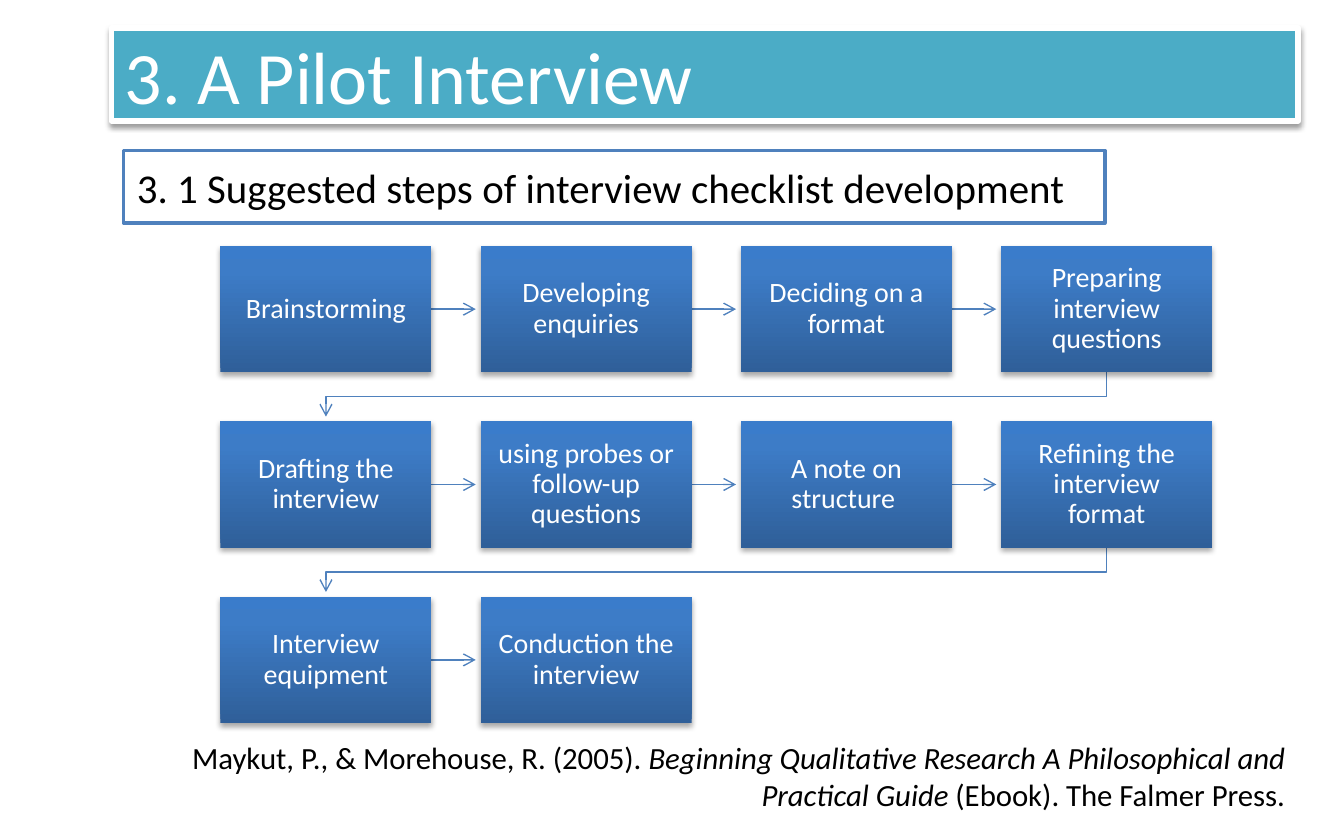
from dataclasses import dataclass

from lxml import etree
from pptx import Presentation
from pptx import util as u
from pptx.dml.color import RGBColor
from pptx.enum import shapes, text
from pptx.oxml import ns

Inches, Pt = u.Inches, u.Pt


@dataclass(frozen=True)
class Theme:
    font: str = "Calibri"
    white: str = "FFFFFF"
    black: str = "000000"
    teal: str = "4BACC6"
    blue: str = "4F81BD"
    step_gradient: tuple = ((0, "2F5F99"), (80, "3D7CC7"), (100, "3A7CCB"))
    title_size: float = 39.6
    subtitle_size: float = 21.9
    step_size: float = 15
    citation_size: float = 16.5


THEME = Theme()
STEPS = (
    ("Brainstorming", "Developing enquiries", "Deciding on a format",
     "Preparing interview questions"),
    ("Drafting the interview", "using probes or follow-up questions",
     "A note on structure ", "Refining the interview format"),
    ("Interview equipment", "Conduction the interview"),
)
FIRST_LEFT, LAST_LEFT = 1.64, 7.45
FIRST_TOP, LAST_TOP = 1.83, 4.44
COLUMN_PITCH = (LAST_LEFT - FIRST_LEFT) / 3
ROW_PITCH = (LAST_TOP - FIRST_TOP) / 2
STEP_WIDTH, STEP_HEIGHT = 1.57, 0.94
ARROW_LENGTH = 0.33
ELBOW_DROP = 0.18


def apply(target, values):
    for name, value in values.items():
        setattr(target, name, value)


def child(parent, tag, **attributes):
    element = etree.SubElement(parent, ns.qn(tag))
    for name, value in attributes.items():
        element.set(name, str(value))
    return element


def set_line(line, color, width):
    line.color.rgb = RGBColor.from_string(color)
    line.width = Pt(width)


def add_shadow(box, blur, distance, opacity):
    effects = box._element.spPr.find(ns.qn("a:effectLst"))
    shadow = child(effects, "a:outerShdw", blurRad=Pt(blur), dist=Pt(distance),
                   dir=5400000, algn="ctr", rotWithShape=0)
    color = child(shadow, "a:srgbClr", val=THEME.black)
    child(color, "a:alpha", val=opacity * 1000)


def fill_gradient(box, stops):
    box.fill.gradient()
    box.fill.gradient_angle = 90
    stop_list = box._element.spPr.find(".//" + ns.qn("a:gsLst"))
    for stop in list(stop_list):
        stop_list.remove(stop)
    for position, color in stops:
        child(child(stop_list, "a:gs", pos=position * 1000), "a:srgbClr", val=color)


def write(frame, runs, size, color, align, margin=None, paragraph_format=None):
    apply(frame, {"word_wrap": True, "vertical_anchor": text.MSO_ANCHOR.MIDDLE})
    if margin is not None:
        sides = ("left", "top", "right", "bottom")
        apply(frame, {f"margin_{side}": Inches(margin) for side in sides})
    paragraph = frame.paragraphs[0]
    apply(paragraph, {"alignment": align, **(paragraph_format or {})})
    for words, italic in runs:
        run = paragraph.add_run()
        run.text = words
        apply(run.font, {"name": THEME.font, "size": Pt(size), "italic": italic})
        run.font.color.rgb = RGBColor.from_string(color)


def add_box(slide, left, top, width, height):
    box = slide.shapes.add_shape(shapes.MSO_SHAPE.RECTANGLE, Inches(left),
                                 Inches(top), Inches(width), Inches(height))
    box.shadow.inherit = False
    return box


def add_heading(slide, words, place, fill, border, width, size, color):
    heading = add_box(slide, *place)
    heading.fill.solid()
    heading.fill.fore_color.rgb = RGBColor.from_string(fill)
    set_line(heading.line, border, width)
    write(heading.text_frame, [(words, False)], size, color, text.PP_ALIGN.LEFT)
    return heading


def add_step(slide, words, left, top):
    step = add_box(slide, left, top, STEP_WIDTH, STEP_HEIGHT)
    step.line.fill.background()
    fill_gradient(step, THEME.step_gradient)
    add_shadow(step, 3.1, 1.8, 35)
    write(step.text_frame, [(words, False)], THEME.step_size, THEME.white,
          text.PP_ALIGN.CENTER, 0.12, {"line_spacing": 0.9, "space_after": Pt(5.25)})


def finish_arrow(arrow):
    set_line(arrow.line, THEME.blue, 0.75)
    child(arrow.line._get_or_add_ln(), "a:tailEnd", type="arrow")


def add_next_arrow(slide, left, top):
    start = left + STEP_WIDTH
    middle = Inches(top + STEP_HEIGHT / 2)
    arrow = slide.shapes.add_connector(shapes.MSO_CONNECTOR.STRAIGHT, Inches(start),
                                       middle, Inches(start + ARROW_LENGTH), middle)
    finish_arrow(arrow)
    child(arrow._element.spPr, "a:effectLst")


def add_row_arrow(slide, top):
    start_x, end_x = (left + STEP_WIDTH / 2 for left in (LAST_LEFT, FIRST_LEFT))
    start_y = top + STEP_HEIGHT
    turn_y, end_y = start_y + ELBOW_DROP, start_y + ARROW_LENGTH
    route = [(Inches(x), Inches(y)) for x, y in
             ((start_x, start_y), (start_x, turn_y), (end_x, turn_y), (end_x, end_y))]
    builder = slide.shapes.build_freeform(*route[0])
    builder.add_line_segments(route[1:], close=False)
    arrow = builder.convert_to_shape()
    arrow.shadow.inherit = False
    arrow.fill.background()
    finish_arrow(arrow)


def add_flow(slide):
    for row, labels in enumerate(STEPS):
        top = FIRST_TOP + row * ROW_PITCH
        for column, words in enumerate(labels):
            left = FIRST_LEFT + column * COLUMN_PITCH
            if column < len(labels) - 1:
                add_next_arrow(slide, left, top)
            elif row < len(STEPS) - 1:
                add_row_arrow(slide, top)
            add_step(slide, words, left, top)


def add_citation(slide):
    citation = slide.shapes.add_textbox(Inches(0.83), Inches(5.46),
                                        Inches(8.83), Inches(0.63))
    runs = (
        ("Maykut, P., & Morehouse, R. (2005). ", False),
        ("Beginning Qualitative Research A Philosophical and Practical Guide", True),
        (" (Ebook). The Falmer Press.", False),
    )
    write(citation.text_frame, runs, THEME.citation_size, THEME.black,
          text.PP_ALIGN.RIGHT)


def main():
    deck = Presentation()
    apply(deck, {"slide_width": Inches(10), "slide_height": Inches(6.25)})
    slide = deck.slides.add_slide(deck.slide_layouts[6])
    title = add_heading(slide, "3. A Pilot Interview", (0.83, 0.21, 8.83, 0.69),
                        THEME.teal, THEME.white, 3, THEME.title_size, THEME.white)
    add_shadow(title, 3.1, 1.6, 38)
    add_heading(slide, "3. 1 Suggested steps of interview checklist development",
                (0.92, 1.12, 7.3, 0.54), THEME.white, THEME.blue, 2,
                THEME.subtitle_size, THEME.black)
    add_flow(slide)
    add_citation(slide)
    deck.save("out.pptx")


if __name__ == "__main__":
    main()
